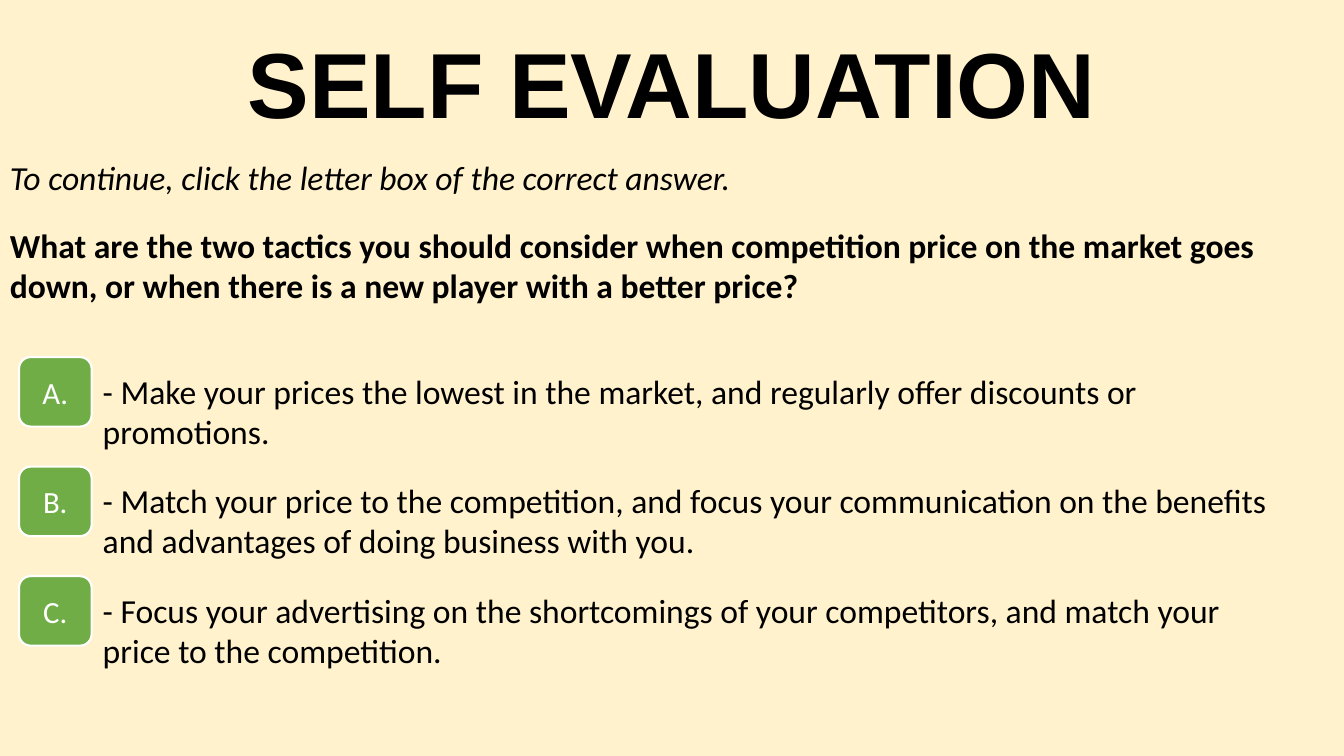
from pptx import Presentation
from pptx.dml.color import RGBColor
from pptx.enum import shapes, text
from pptx.util import Cm, Pt

ANSWERS = [
    ("A.", "- Make your prices the lowest in the market, and regularly offer "
           "discounts or promotions.", 29.08),
    ("B.", "- Match your price to the competition, and focus your communication "
           "on the benefits and advantages of doing business with you.", 31.06),
    ("C.", "- Focus your advertising on the shortcomings of your competitors, "
           "and match your price to the competition.", 29.39),
]
TOP, PITCH = 9.0, 2.76


def paint(fill, color):
    fill.solid()
    fill.fore_color.rgb = RGBColor.from_string(color)


def write(frame, words, size, color="000000", font="Calibri", bold=False, italic=False):
    """Put one formatted paragraph in the frame and return it."""
    frame.text = words
    frame.word_wrap = True
    par = frame.paragraphs[0]
    for run in par.runs:
        run.font.name = font
        run.font.size = Pt(size)
        run.font.bold = bold
        run.font.italic = italic
        run.font.color.rgb = RGBColor.from_string(color)
    return par


def add_title(slide, words):
    title = slide.shapes.title
    title.left, title.top, title.width, title.height = Cm(2.33), Cm(0.38), Cm(29.21), Cm(3.68)
    par = write(title.text_frame, words, 66, font="Arial", bold=True)
    par.alignment = text.PP_ALIGN.CENTER
    par.line_spacing = 0.9
    title.text_frame.vertical_anchor = text.MSO_ANCHOR.MIDDLE


def add_text(slide, words, left, top, width, height=2.31, **style):
    box = slide.shapes.add_textbox(Cm(left), Cm(top), Cm(width), Cm(height))
    write(box.text_frame, words, 24, **style)
    box.text_frame.auto_size = text.MSO_AUTO_SIZE.SHAPE_TO_FIT_TEXT


def add_button(slide, letter, left, top):
    button = slide.shapes.add_shape(shapes.MSO_SHAPE.ROUNDED_RECTANGLE,
                                    Cm(left), Cm(top), Cm(1.83), Cm(1.75))
    button.shadow.inherit = False
    paint(button.fill, "70AD47")
    paint(button.line.fill, "FFFFFF")
    button.line.width = Pt(1.5)
    par = write(button.text_frame, letter, 22, color="FFFFFF")
    par.alignment = text.PP_ALIGN.CENTER
    button.text_frame.vertical_anchor = text.MSO_ANCHOR.MIDDLE


def main():
    deck = Presentation()
    deck.slide_width, deck.slide_height = Cm(33.87), Cm(19.05)
    slide = deck.slides.add_slide(deck.slide_layouts[5])
    paint(slide.background.fill, "FFF2CC")
    add_title(slide, "SELF EVALUATION")
    add_text(slide, "To continue, click the letter box of the correct answer.",
             0, 3.84, 24.16, 1.28, italic=True)
    add_text(slide, "What are the two tactics you should consider when competition "
             "price on the market goes down, or when there is a new player with a "
             "better price?", 0, 5.54, 32.94, bold=True)
    for row, (letter, answer, width) in enumerate(ANSWERS):
        top = TOP + row * PITCH
        add_button(slide, letter, 0.48, top)
        add_text(slide, answer, 2.34, top + 0.21, width)
    deck.save("out.pptx")


if __name__ == "__main__":
    main()
